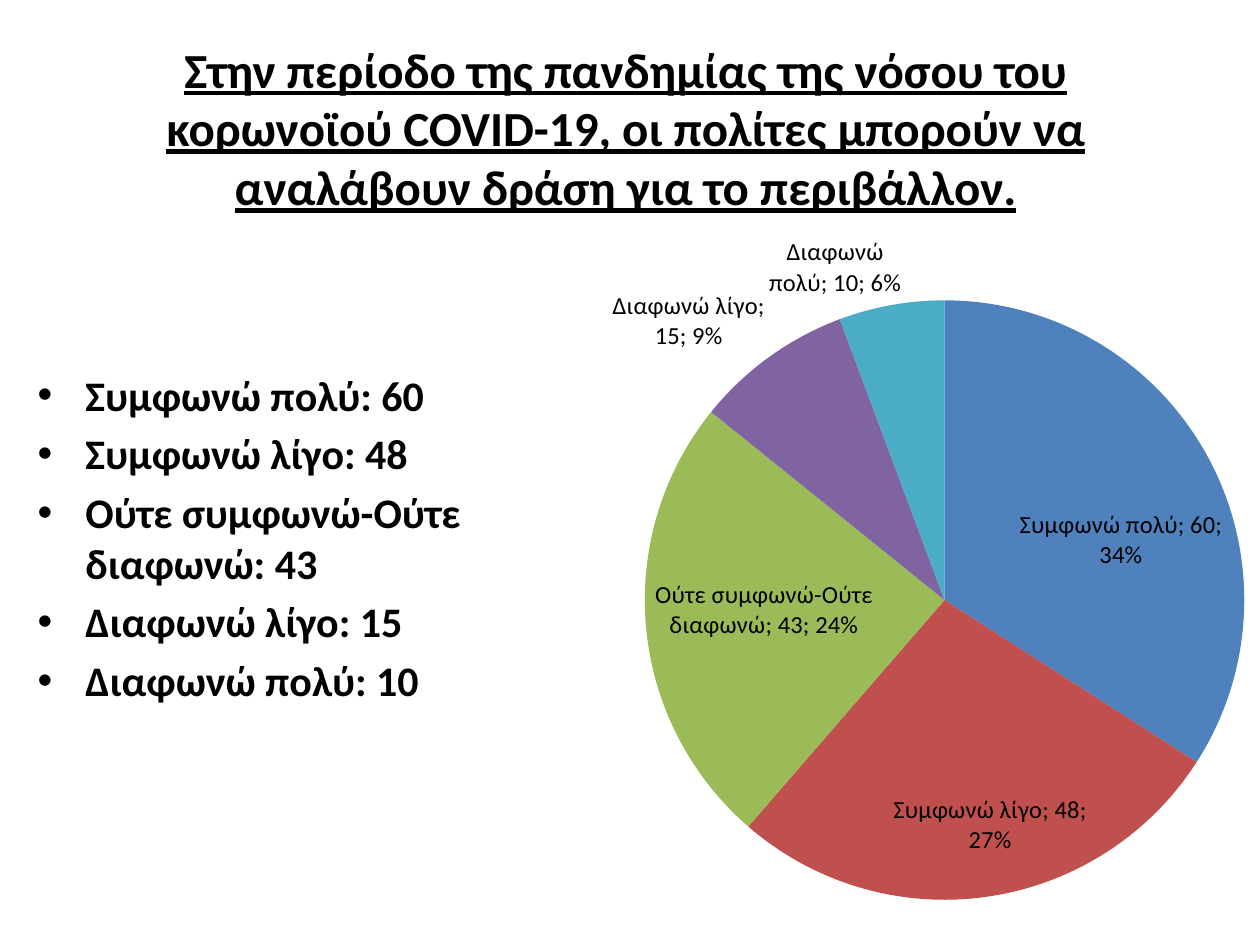
"""Build a survey slide with a title, a bullet list and a pie chart."""
from lxml.etree import SubElement
from pptx import Presentation
from pptx.chart.data import CategoryChartData
from pptx.dml.color import RGBColor
from pptx.enum.chart import XL_CHART_TYPE, XL_LABEL_POSITION
from pptx.enum.text import MSO_ANCHOR, PP_ALIGN
from pptx.oxml import parse_xml
from pptx.oxml.ns import nsdecls, qn
from pptx.util import Inches, Pt

BLACK = RGBColor(0x00, 0x00, 0x00)
BLUE = RGBColor(0x4F, 0x81, 0xBD)
RED = RGBColor(0xC0, 0x50, 0x4D)
GREEN = RGBColor(0x9B, 0xBB, 0x59)
PURPLE = RGBColor(0x80, 0x64, 0xA2)
TEAL = RGBColor(0x4B, 0xAC, 0xC6)

TITLE = ("Στην περίοδο της πανδημίας της νόσου του κορωνοϊού COVID-19, "
         "οι πολίτες μπορούν να αναλάβουν δράση για το περιβάλλον.")
ANSWERS = [
    ("Συμφωνώ πολύ", 60, BLUE),
    ("Συμφωνώ λίγο", 48, RED),
    ("Ούτε συμφωνώ-Ούτε διαφωνώ", 43, GREEN),
    ("Διαφωνώ λίγο", 15, PURPLE),
    ("Διαφωνώ πολύ", 10, TEAL),
]
TITLE_FONT = {"name": "Calibri", "size": Pt(28), "bold": True, "underline": True}
LIST_FONT = {"name": "Calibri", "size": Pt(24), "bold": True}
LABEL_FONT = {"name": "Calibri", "size": Pt(14)}
PIE_LAYOUT = {"xMode": "edge", "yMode": "edge", "x": 0.21, "y": 0.14, "w": 0.77, "h": 0.8}


def set_font(font, values):
    for name, value in values.items():
        setattr(font, name, value)
    font.color.rgb = BLACK


def add_text(s, left, top, width, height):
    tf = s.shapes.add_textbox(Inches(left), Inches(top), Inches(width), Inches(height)).text_frame
    tf.word_wrap = True
    return tf


prs = Presentation()
prs.slide_width, prs.slide_height = Inches(10), Inches(7.5)
s = prs.slides.add_slide(prs.slide_layouts[6])

tf = add_text(s, 0.51, 0, 8.91, 2.02)
tf.vertical_anchor = MSO_ANCHOR.MIDDLE
p = tf.paragraphs[0]
p.alignment = PP_ALIGN.CENTER
r = p.add_run()
r.text = TITLE
set_font(r.font, TITLE_FONT)

tf = add_text(s, 0.2, 2.88, 3.7, 2.99)
for i, (answer, votes, color) in enumerate(ANSWERS):
    p = tf.add_paragraph() if i else tf.paragraphs[0]
    p.space_before = Pt(4.8)
    pPr = p._p.get_or_add_pPr()
    pPr.set("marL", str(Inches(0.38)))
    pPr.set("indent", str(Inches(-0.38)))
    SubElement(pPr, qn("a:buFont"), typeface="Arial")
    SubElement(pPr, qn("a:buChar"), char="•")
    r = p.add_run()
    r.text = f"{answer}: {votes}"
    set_font(r.font, LIST_FONT)

data = CategoryChartData()
data.categories = [answer for answer, votes, color in ANSWERS]
data.add_series("Series 1", [votes for answer, votes, color in ANSWERS])
chart = s.shapes.add_chart(XL_CHART_TYPE.PIE, Inches(3.82), Inches(1.55),
                           Inches(6.18), Inches(5.95), data).chart
chart.has_title = False
chart.has_legend = False
set_font(chart.font, {"name": "Calibri", "size": Pt(10)})

plot = chart.plots[0]
plot.vary_by_categories = True
for i, (answer, votes, color) in enumerate(ANSWERS):
    fill = plot.series[0].points[i].format.fill
    fill.solid()
    fill.fore_color.rgb = color

labels = plot.series[0].data_labels
for name in ("show_category_name", "show_value", "show_percentage"):
    setattr(labels, name, True)
labels.position = XL_LABEL_POSITION.BEST_FIT
set_font(labels.font, LABEL_FONT)
separator = parse_xml(f'<c:separator {nsdecls("c")}>; </c:separator>')
labels._element.find(qn("c:showBubbleSize")).addnext(separator)

area = chart._chartSpace.chart.plotArea
for layout in area.findall(qn("c:layout")):
    area.remove(layout)
layout = parse_xml(f'<c:layout {nsdecls("c")}><c:manualLayout>'
                   '<c:layoutTarget val="inner"/></c:manualLayout></c:layout>')
for name, value in PIE_LAYOUT.items():
    SubElement(layout[0], qn(f"c:{name}"), val=str(value))
area.insert(0, layout)

prs.save("out.pptx")
